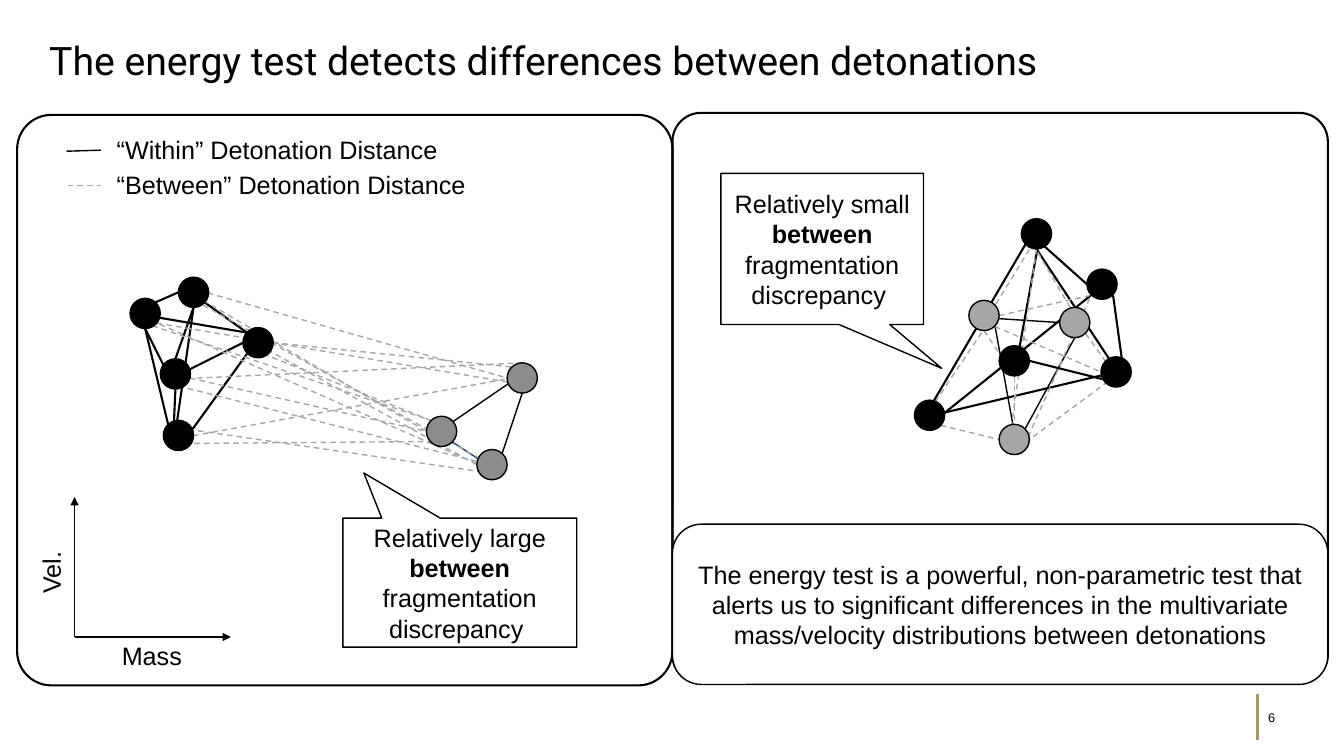
from lxml.etree import SubElement
from pptx import Presentation
from pptx.dml.color import RGBColor
from pptx.enum.dml import MSO_LINE
from pptx.enum.shapes import MSO_CONNECTOR, MSO_SHAPE as Shape
from pptx.enum.text import MSO_ANCHOR as Anchor, PP_ALIGN as Align
from pptx.oxml.ns import qn
from pptx.util import Pt

PX = 9144
BLACK = RGBColor(0x00, 0x00, 0x00)
WHITE = RGBColor(0xFF, 0xFF, 0xFF)
DARK_GRAY = RGBColor(0x8C, 0x8C, 0x8C)
LIGHT_GRAY = RGBColor(0xA6, 0xA6, 0xA6)
NAVY = RGBColor(0x1C, 0x3F, 0x6E)
GOLD = RGBColor(0xA5, 0x9A, 0x60)
DOT_SIZE = 30

deck = Presentation()
deck.slide_width = 1333 * PX
deck.slide_height = 750 * PX
slide = deck.slides.add_slide(deck.slide_layouts[6])


def draw_line(ends, color=BLACK, width=1, dashed=False, arrow=False):
    line = slide.shapes.add_connector(MSO_CONNECTOR.STRAIGHT, *[v * PX for v in ends])
    line.line.color.rgb = color
    line.line.width = Pt(width)
    if dashed:
        line.line.dash_style = MSO_LINE.DASH
    if arrow:
        SubElement(line.line._get_or_add_ln(), qn("a:tailEnd"), type="triangle")
    SubElement(line._element.spPr, qn("a:effectLst"))


def write(frame, runs, anchor=Anchor.TOP, align=Align.LEFT, size=18, font="Arial"):
    frame.word_wrap = True
    frame.vertical_anchor = anchor
    paragraph = frame.paragraphs[0]
    paragraph.alignment = align
    for text, bold in runs:
        run = paragraph.add_run()
        run.text = text
        run.font.color.rgb = BLACK
        style = {"name": font, "size": Pt(size), "bold": bold}
        for key, value in style.items():
            setattr(run.font, key, value)


draw_line((1247, 689, 1247, 734), GOLD, 2)

labels = [
    ("6", (1248, 698, 52, 27), 0, {"size": 9, "anchor": Anchor.MIDDLE}),
    ("The energy test detects differences between detonations",
     (39, 31, 1200, 57), 0, {"size": 28, "font": "Roboto", "anchor": Anchor.MIDDLE}),
    ("Mass", (111, 630, 113, 40), 0, {}),
    ("Vel.", (-6, 522, 113, 40), 270, {}),
    ("“Within” Detonation Distance", (106, 128, 343, 40), 0, {}),
    ("“Between” Detonation Distance", (106, 163, 377, 40), 0, {}),
]
for text, box, rotation, style in labels:
    label = slide.shapes.add_textbox(*[v * PX for v in box])
    label.rotation = rotation
    write(label.text_frame, [(text, False)], **style)

for axis in [(74, 632, 229, 632), (74, 632, 74, 493)]:
    draw_line(axis, arrow=True)
draw_line((66, 150, 100, 149))
draw_line((67, 184, 100, 184), LIGHT_GRAY, dashed=True)

distant = {
    "heavy": [
        (179, 371, 241, 340), (172, 431, 174, 386), (185, 434, 245, 351),
        (173, 436, 192, 305), (167, 422, 144, 326), (245, 330, 145, 313),
        (177, 290, 154, 300), (203, 300, 245, 330), (192, 305, 174, 356),
        (144, 326, 174, 386),
    ],
    "light": [(438, 426, 514, 374), (498, 450, 518, 390)],
    "between": [
        (271, 340, 507, 364), (261, 351, 427, 417), (265, 347, 473, 461),
        (183, 440, 427, 438), (187, 426, 498, 471), (182, 434, 519, 373),
        (193, 293, 423, 428), (193, 298, 487, 461), (197, 288, 503, 375),
        (179, 373, 423, 428), (177, 383, 486, 461), (176, 376, 518, 360),
        (146, 319, 503, 379), (142, 320, 427, 417), (141, 314, 498, 471),
    ],
    "first": [(129, 296), (177, 275), (162, 417), (241, 325), (159, 356)],
    "second": [(423, 413), (473, 446), (503, 360)],
    "second_color": DARK_GRAY,
}
overlapping = {
    "heavy": [
        (1022, 234, 912, 422), (1031, 240, 1078, 282), (1026, 244, 1108, 368),
        (1006, 373, 1030, 241), (1107, 369, 917, 414), (934, 412, 1082, 293),
        (1021, 358, 1093, 376), (1115, 373, 1104, 293),
    ],
    "light": [(1017, 425, 1066, 335), (1006, 429, 987, 324), (1051, 320, 973, 315)],
    "between": [
        (933, 422, 991, 436), (1017, 439, 1097, 380), (1006, 373, 1006, 421),
        (1012, 451, 1082, 293), (1028, 247, 1002, 431), (979, 322, 912, 422),
        (976, 328, 1006, 373), (991, 313, 1082, 293), (987, 324, 1092, 369),
        (1031, 231, 987, 303), (1076, 330, 1025, 243), (1097, 359, 1076, 330),
    ],
    "first": [(1092, 354), (1013, 217), (991, 343), (1078, 267), (907, 397)],
    "second": [(961, 298), (991, 421), (1051, 305)],
    "second_color": LIGHT_GRAY,
}
draw_line((483, 461, 448, 438), NAVY)
for cluster in (distant, overlapping):
    for ends in cluster["heavy"]:
        draw_line(ends, width=1.5)
    for ends in cluster["light"]:
        draw_line(ends)
    for ends in cluster["between"]:
        draw_line(ends, LIGHT_GRAY, dashed=True)
    for group, color in (("first", BLACK), ("second", cluster["second_color"])):
        for left, top in cluster[group]:
            fragment = slide.shapes.add_shape(
                Shape.OVAL, left * PX, top * PX, DOT_SIZE * PX, DOT_SIZE * PX)
            fragment.shadow.inherit = False
            fragment.fill.solid()
            fragment.fill.fore_color.rgb = color
            fragment.line.color.rgb = BLACK
            fragment.line.width = Pt(1)

CALLOUT_END = [("between", True), (" fragmentation discrepancy ", False)]
SUMMARY = ("The energy test is a powerful, non-parametric test that alerts us to "
           "significant differences in the multivariate mass/velocity distributions "
           "between detonations")
frames = [
    (Shape.ROUNDED_RECTANGLE, (17, 114, 650, 566), [0.06], None, 1.5, []),
    (Shape.ROUNDED_RECTANGLE, (667, 112, 650, 566), [0.05], None, 1.5, []),
    (Shape.RECTANGULAR_CALLOUT, (340, 514, 232, 128), [-0.41, -0.85], None, 1,
     [("Relatively large ", False)] + CALLOUT_END),
    (Shape.RECTANGULAR_CALLOUT, (715, 172, 201, 150), [0.59, 0.79], None, 1,
     [("Relatively small ", False)] + CALLOUT_END),
    (Shape.ROUNDED_RECTANGLE, (667, 520, 650, 159), [0.18], WHITE, 1,
     [(SUMMARY, False)]),
]
for kind, box, adjustments, fill, width, runs in frames:
    frame = slide.shapes.add_shape(kind, *[v * PX for v in box])
    frame.shadow.inherit = False
    for index, value in enumerate(adjustments):
        frame.adjustments[index] = value
    if fill is None:
        frame.fill.background()
    else:
        frame.fill.solid()
        frame.fill.fore_color.rgb = fill
    frame.line.color.rgb = BLACK
    frame.line.width = Pt(width)
    if runs:
        write(frame.text_frame, runs, Anchor.MIDDLE, Align.CENTER)

deck.save("out.pptx")
